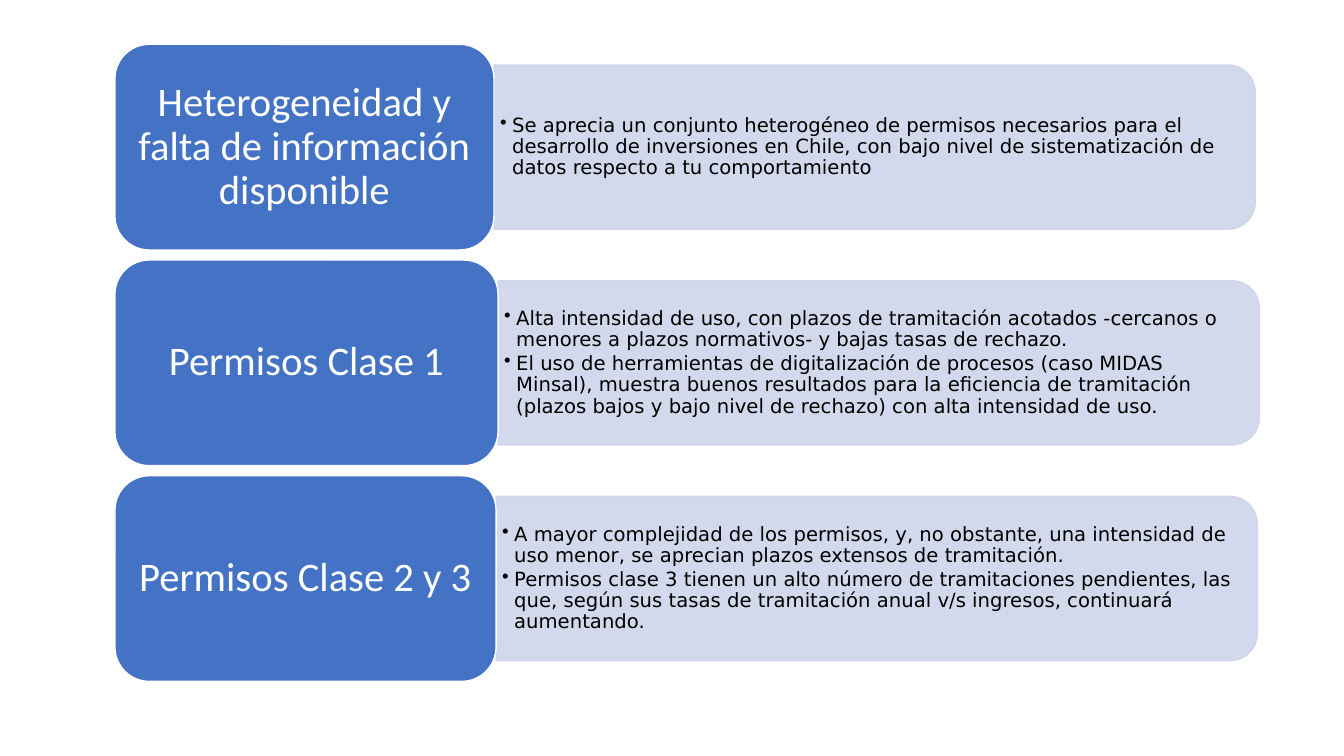
from lxml.etree import SubElement
from pptx import Presentation
from pptx.dml.color import RGBColor
from pptx.enum.shapes import MSO_SHAPE as SHAPE
from pptx.enum.text import MSO_ANCHOR as ANCHOR, PP_ALIGN as ALIGN
from pptx.oxml.ns import qn
from pptx.util import Pt

ROWS = [
    ("Heterogeneidad y falta de información disponible", 376, [
        "Se aprecia un conjunto heterogéneo de permisos necesarios para el desarrollo de inversiones en Chile, con bajo nivel de sistematización de datos respecto a tu comportamiento",
    ]),
    ("Permisos Clase 1", 380, [
        "Alta intensidad de uso, con plazos de tramitación acotados -cercanos o menores a plazos normativos- y bajas tasas de rechazo.",
        "El uso de herramientas de digitalización de procesos (caso MIDAS Minsal), muestra buenos resultados para la eficiencia de tramitación (plazos bajos y bajo nivel de rechazo) con alta intensidad de uso.",
    ]),
    ("Permisos Clase 2 y 3", 378, [
        "A mayor complejidad de los permisos, y, no obstante, una intensidad de uso menor, se aprecian plazos extensos de tramitación.",
        "Permisos clase 3 tienen un alto número de tramitaciones pendientes, las que, según sus tasas de tramitación anual v/s ingresos, continuará aumentando.",
    ]),
]
BLUE = RGBColor(0x44, 0x72, 0xC4)
PALE = RGBColor(0xCF, 0xD5, 0xEA)
WHITE = RGBColor(0xFF, 0xFF, 0xFF)
BLACK = RGBColor(0, 0, 0)

PX = 9144
LEFT, TOP, PITCH = 114, 44, 214
LABEL_H = 204
PANEL_W, PANEL_H = 755, 163
TEXT_W, TEXT_H = 747, 147
INDENT = 12


def px(*lengths):
    return [round(n * PX) for n in lengths]


def add_block(s, kind, box, fill, line):
    sp = s.shapes.add_shape(kind, *px(*box))
    sp.shadow.inherit = False
    sp.fill.solid()
    sp.fill.fore_color.rgb = fill
    sp.line.color.rgb = line
    sp.line.width = Pt(1)
    return sp


def set_alpha(sp, percent):
    for color in sp._element.spPr.iter(qn("a:srgbClr")):
        SubElement(color, qn("a:alpha"), val=str(percent * 1000))


def set_frame(tf, side, edge):
    tf.word_wrap = True
    tf.vertical_anchor = ANCHOR.MIDDLE
    tf.margin_left, tf.margin_right, tf.margin_top, tf.margin_bottom = px(side, side, edge, edge)


def add_run(p, text, font, size, color):
    p.line_spacing = 0.9
    r = p.add_run()
    r.text = text
    r.font.name = font
    r.font.size = Pt(size)
    r.font.color.rgb = color


def add_bullet(p):
    pPr = p._p.get_or_add_pPr()
    pPr.set("marL", str(INDENT * PX))
    pPr.set("indent", str(-INDENT * PX))
    SubElement(pPr, qn("a:buChar"), char="•")


def add_panel(s, x, mid, points):
    box = (x + (PANEL_W - PANEL_H) / 2, mid - PANEL_W / 2, PANEL_H, PANEL_W)
    sp = add_block(s, SHAPE.ROUND_2_SAME_RECTANGLE, box, PALE, PALE)
    sp.rotation = 90
    set_alpha(sp, 90)
    tf = s.shapes.add_textbox(*px(x, mid - TEXT_H / 2, TEXT_W, TEXT_H)).text_frame
    set_frame(tf, 6, 3)
    for i, point in enumerate(points):
        p = tf.add_paragraph() if i else tf.paragraphs[0]
        add_bullet(p)
        p.level = 1
        p.alignment = ALIGN.LEFT
        p.space_after = Pt(2)
        add_run(p, point, "DejaVu Sans", 14, BLACK)


def add_label(s, y, width, title):
    sp = add_block(s, SHAPE.ROUNDED_RECTANGLE, (LEFT, y, width, LABEL_H), BLUE, WHITE)
    set_frame(sp.text_frame, 12, 6)
    p = sp.text_frame.paragraphs[0]
    p.alignment = ALIGN.CENTER
    add_run(p, title, "Calibri", 29, WHITE)


def main():
    prs = Presentation()
    prs.slide_width, prs.slide_height = px(1333, 750)
    s = prs.slides.add_slide(prs.slide_layouts[6])
    for i, (title, width, points) in enumerate(ROWS):
        y = TOP + i * PITCH
        add_panel(s, LEFT + width, y + LABEL_H / 2, points)
        add_label(s, y, width, title)
    prs.save("out.pptx")


if __name__ == "__main__":
    main()
